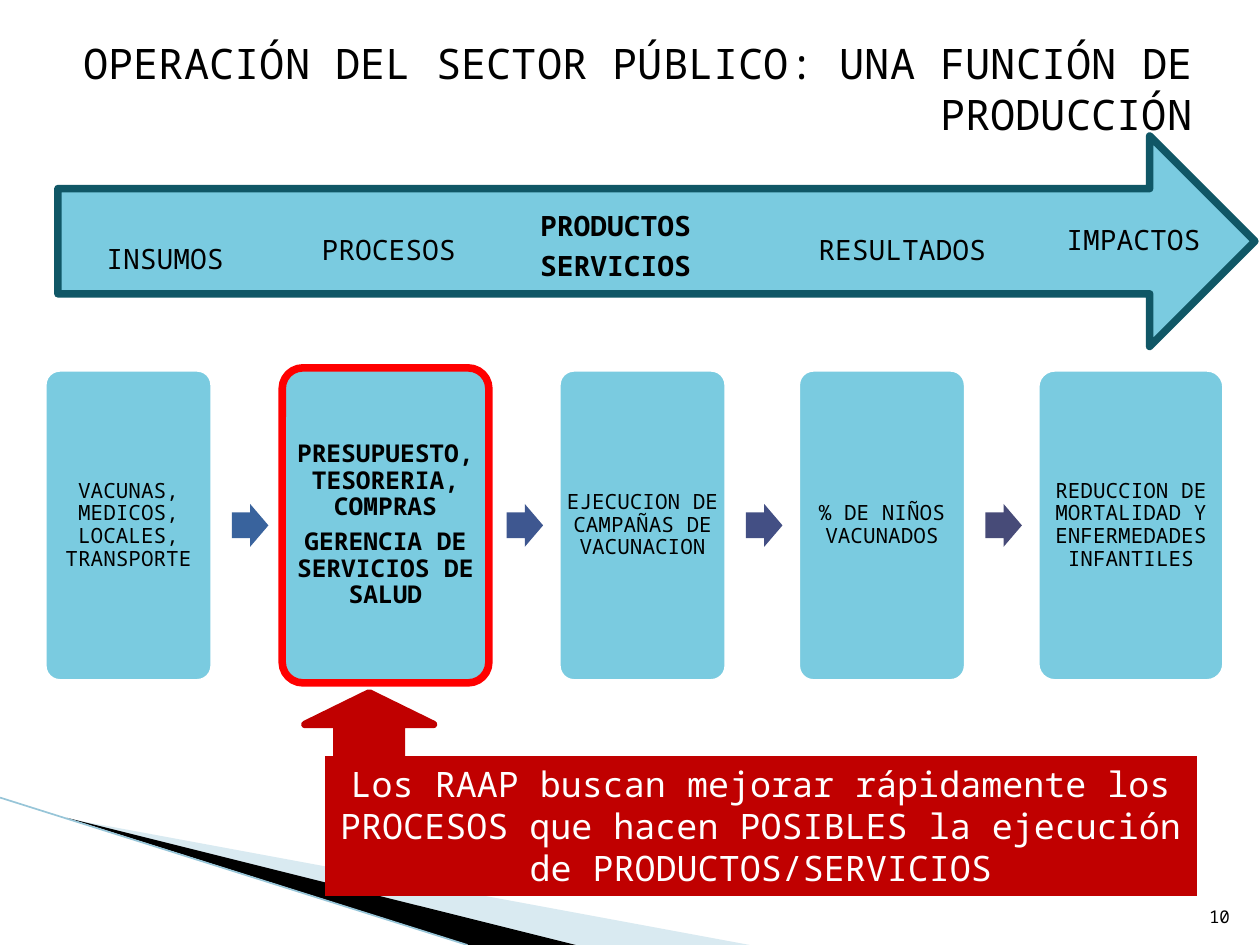
from pptx import Presentation
from pptx.util import Inches, Pt
from pptx.dml.color import RGBColor as RGB
from pptx.enum.shapes import MSO_SHAPE as Kind, MSO_CONNECTOR as Link
from pptx.enum.text import PP_ALIGN as Align, MSO_ANCHOR as Anchor
from pptx.oxml.ns import qn
from lxml.etree import SubElement

FONT = "Noto Sans Mono"
HUE = {"sky": "7ACBE0", "teal": "105766", "red": "C00000", "alert": "FF0000",
       "white": "FFFFFF", "black": "000000", "pale": "A0CBDC", "edge": "97C5D8"}

TITLE = "OPERACIÓN DEL SECTOR PÚBLICO: UNA FUNCIÓN DE PRODUCCIÓN"
NOTE = ("Los RAAP buscan mejorar rápidamente los PROCESOS que hacen POSIBLES "
        "la ejecución de PRODUCTOS/SERVICIOS")
STAGES = [
    (["INSUMOS"], (0.62, 1.75, 1.38, 0.63)),
    (["PROCESOS"], (2.46, 1.58, 1.25, 0.83)),
    (["PRODUCTOS", "SERVICIOS"], (4.04, 1.58, 1.69, 0.77)),
    (["RESULTADOS"], (6.29, 1.58, 1.74, 0.83)),
    (["IMPACTOS"], (8.37, 1.5, 1.25, 0.83)),
]
STEPS = [
    (["VACUNAS, MEDICOS, LOCALES, TRANSPORTE"], 1.36),
    (["PRESUPUESTO, TESORERIA, COMPRAS", "GERENCIA DE SERVICIOS DE SALUD"], 1.64),
    (["EJECUCION DE CAMPAÑAS DE VACUNACION"], 1.36),
    (["% DE NIÑOS VACUNADOS"], 1.36),
    (["REDUCCION DE MORTALIDAD Y ENFERMEDADES INFANTILES"], 1.51),
]
ARROWS = ["39639D", "3E5790", "434F84", "474B78"]
LEFT, TOP, TALL, GAP = 0.34, 2.92, 2.5, 0.54
WEDGES = [
    ("pale", [(0.55, 6.5), (5.95, 7.5), (4.56, 7.5)]),
    ("black", [(0.53, 6.49), (4.57, 7.5), (3.72, 7.5)]),
]

deck = Presentation()
deck.slide_width, deck.slide_height = Inches(10), Inches(7.5)
slide = deck.slides.add_slide(deck.slide_layouts[6])
shapes = slide.shapes


def paint(shape, fill, line=None):
    shape.shadow.inherit = False
    shape.fill.solid()
    shape.fill.fore_color.rgb = RGB.from_string(fill)
    if line:
        shape.line.color.rgb = RGB.from_string(line)
        shape.line.width = Pt(4.33)
    else:
        shape.line.fill.background()


def draw(kind, box, fill, line=None, adj=()):
    shape = shapes.add_shape(kind, *map(Inches, box))
    for i, value in enumerate(adj):
        shape.adjustments[i] = value
    paint(shape, fill, line)
    return shape


def write(lines, box=None, shape=None, size=12, color="black", bold=False,
          align=Align.CENTER, anchor=Anchor.MIDDLE, pad=(0.1, 0.05), tight=False):
    shape = shape or shapes.add_textbox(*map(Inches, box))
    frame = shape.text_frame
    frame.word_wrap = True
    frame.vertical_anchor = anchor
    frame.margin_left = frame.margin_right = Inches(pad[0])
    frame.margin_top = frame.margin_bottom = Inches(pad[1])
    for i, line in enumerate(lines):
        para = frame.add_paragraph() if i else frame.paragraphs[0]
        para.alignment = align
        if tight:
            para.line_spacing = 0.9
            para.space_after = Pt(round(size * 0.38))
        run = para.add_run()
        run.text = line
        run.font.name, run.font.size, run.font.bold = FONT, Pt(size), bold
        run.font.color.rgb = RGB.from_string(HUE[color])


for tone, (start, *rest) in WEDGES:
    path = shapes.build_freeform(*map(Inches, start))
    path.add_line_segments([(Inches(x), Inches(y)) for x, y in rest])
    wedge = path.convert_to_shape()
    paint(wedge, HUE[tone])
    if tone == "pale":
        clr = wedge.fill._xPr.find(qn("a:solidFill"))[0]
        SubElement(clr, qn("a:alpha"), val="40000")

rim = shapes.add_connector(Link.STRAIGHT, *map(Inches, (0, 6.33, 3.71, 7.5)))
rim.line.color.rgb = RGB.from_string(HUE["edge"])
rim.line.width = Pt(0.95)
SubElement(rim._element.spPr, qn("a:effectLst"))

write([TITLE], (0.33, 0.25, 9.23, 0.91), size=24, align=Align.RIGHT, anchor=Anchor.TOP)

draw(Kind.RIGHT_ARROW, (0.46, 1.08, 9.5, 1.67), HUE["sky"], HUE["teal"])
for lines, box in STAGES:
    write(lines, box, size=16, bold=len(lines) > 1, pad=(0, 0.18), tight=True)

draw(Kind.UP_ARROW, (2.42, 5.5, 1.02, 0.5), HUE["red"], HUE["red"])
banner = draw(Kind.RECTANGLE, (2.58, 6, 6.92, 1.11), HUE["red"])
write([NOTE], shape=banner, size=20, color="white")

x = LEFT
for i, (lines, wide) in enumerate(STEPS):
    key = len(lines) > 1
    card = draw(Kind.ROUNDED_RECTANGLE, (x, TOP, wide, TALL), HUE["sky"],
                HUE["alert" if key else "white"], [0.1])
    pad = 0.06 if key else 0.05
    write(lines, (x, TOP, wide, TALL), size=14 if key else 12, bold=key,
          pad=(pad, pad), tight=True)
    x += wide
    if i < len(ARROWS):
        draw(Kind.RIGHT_ARROW, (x + 0.14, 4, 0.29, 0.34), ARROWS[i], adj=(0.6, 0.5))
    x += GAP

write(["10"], (9.46, 7.01, 0.4, 0.4), size=10, align=Align.RIGHT, anchor=Anchor.BOTTOM)

deck.save("out.pptx")
